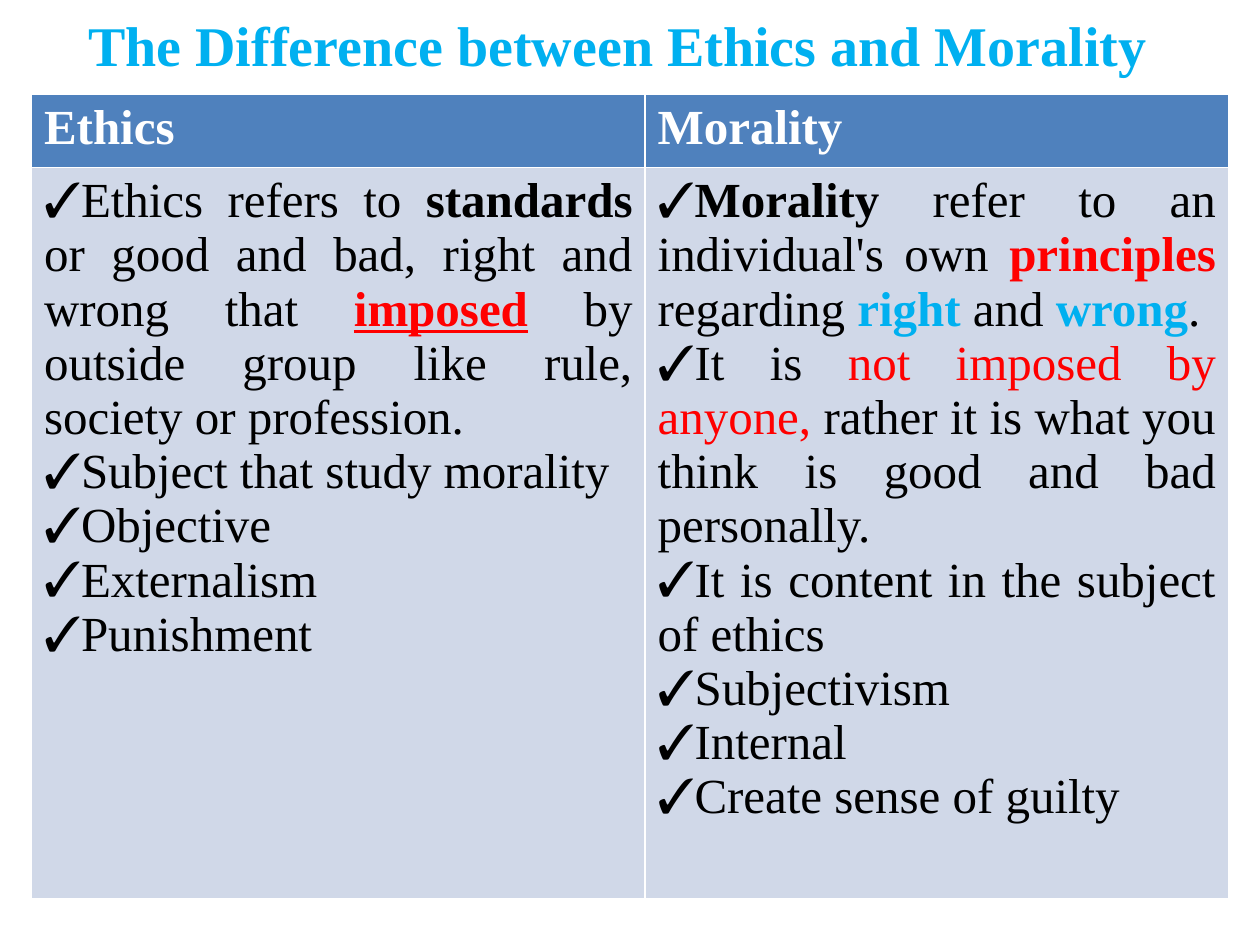
from dataclasses import dataclass

from lxml.etree import SubElement
from pptx import Presentation
from pptx.dml.color import RGBColor
from pptx.enum.text import MSO_ANCHOR, PP_ALIGN
from pptx.oxml.ns import qn
from pptx.util import Inches, Pt

FACE = "Times New Roman"
HUES = {
    "sky": "00B0F0",
    "red": "FF0000",
    "black": "000000",
    "white": "FFFFFF",
    "head": "4F81BD",
    "body": "D0D8E8",
}


@dataclass
class Span:
    text: str
    hue: str = "black"
    bold: bool = False
    line: bool = False
    size: int = 28


@dataclass
class Column:
    name: str
    width: float
    points: list[list[Span]]


COLUMNS = [
    Column("Ethics", 4.87, [
        [Span("Ethics refers to "), Span("standards", bold=True),
         Span(" or good and bad, right and wrong that "),
         Span("imposed", "red", bold=True, line=True),
         Span(" by outside group like rule, society or profession.")],
        [Span("Subject that study morality")],
        [Span("Objective")],
        [Span("Externalism")],
        [Span("Punishment")],
    ]),
    Column("Morality", 4.63, [
        [Span("Morality ", bold=True), Span("refer to an individual's own "),
         Span("principles", "red", bold=True), Span(" regarding "),
         Span("right", "sky", bold=True), Span(" and "),
         Span("wrong", "sky", bold=True), Span(".")],
        [Span("It is "), Span("not imposed by anyone,", "red"),
         Span(" rather it is what you think is good and bad personally.")],
        [Span("It is content in the subject of ethics")],
        [Span("Subjectivism")],
        [Span("Internal")],
        [Span("Create sense of guilty")],
    ]),
]


def write(para, spans: list[Span]) -> None:
    for span in spans:
        run = para.add_run()
        run.text = span.text
        style = {"name": FACE, "size": Pt(span.size),
                 "bold": span.bold, "underline": span.line}
        for key, value in style.items():
            setattr(run.font, key, value)
        run.font.color.rgb = RGBColor.from_string(HUES[span.hue])


def tick(para) -> None:
    para.alignment = PP_ALIGN.JUSTIFY
    props = para._p.get_or_add_pPr()
    SubElement(props, qn("a:buFont"), typeface=FACE)
    SubElement(props, qn("a:buChar"), char="✓")


def paint(cell, hue: str) -> None:
    cell.fill.solid()
    cell.fill.fore_color.rgb = RGBColor.from_string(HUES[hue])


def draw(table, index: int, column: Column) -> None:
    table.columns[index].width = Inches(column.width)
    head, body = table.cell(0, index), table.cell(1, index)
    paint(head, "head")
    paint(body, "body")
    write(head.text_frame.paragraphs[0], [Span(column.name, "white", bold=True)])
    frame = body.text_frame
    for row, spans in enumerate(column.points):
        para = frame.add_paragraph() if row else frame.paragraphs[0]
        tick(para)
        write(para, spans)


def main() -> None:
    deck = Presentation()
    deck.slide_width, deck.slide_height = Inches(10), Inches(7.5)
    slide = deck.slides.add_slide(deck.slide_layouts[5])

    # Title
    title = slide.shapes.title
    place = {"left": 0.6, "top": 0, "width": 9, "height": 0.7}
    for key, value in place.items():
        setattr(title, key, Inches(value))
    title.text_frame.vertical_anchor = MSO_ANCHOR.MIDDLE
    para = title.text_frame.paragraphs[0]
    para.alignment = PP_ALIGN.LEFT
    write(para, [Span("The Difference between Ethics and Morality",
                      "sky", bold=True, size=32)])

    # Comparison table
    table = slide.shapes.add_table(2, len(COLUMNS), Inches(0.25), Inches(0.75),
                                   Inches(9.5), Inches(6.38)).table
    for row, height in zip(table.rows, (0.58, 5.8)):
        row.height = Inches(height)
    for index, column in enumerate(COLUMNS):
        draw(table, index, column)

    deck.save("out.pptx")


if __name__ == "__main__":
    main()
